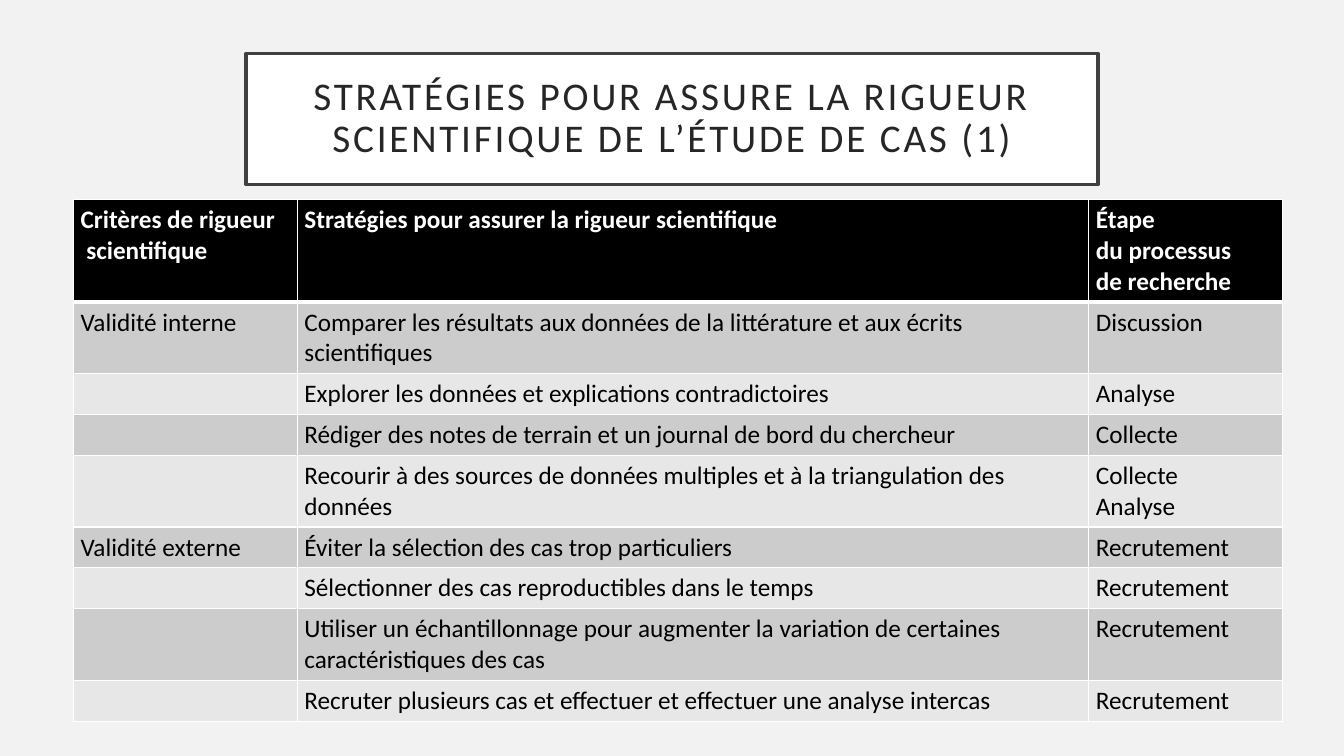
from lxml import etree
from pptx import Presentation
from pptx.dml.color import RGBColor
from pptx.enum import text
from pptx.oxml import ns
from pptx.util import Inches, Pt

COLORS = {
    "background": "F2F2F2", "white": "FFFFFF", "frame": "404040",
    "title": "262626", "black": "000000", "odd": "CCCCCC", "even": "E7E7E7",
}
ROWS = [
    ("Critères de rigueur\n scientifique",
     "Stratégies pour assurer la rigueur scientifique",
     "Étape\ndu processus\nde recherche"),
    ("Validité interne",
     "Comparer les résultats aux données de la littérature et aux écrits scientifiques",
     "Discussion"),
    ("", "Explorer les données et explications contradictoires", "Analyse"),
    ("", "Rédiger des notes de terrain et un journal de bord du chercheur", "Collecte"),
    ("", "Recourir à des sources de données multiples et à la triangulation des données",
     "Collecte\nAnalyse"),
    ("Validité externe", "Éviter la sélection des cas trop particuliers", "Recrutement"),
    ("", "Sélectionner des cas reproductibles dans le temps", "Recrutement"),
    ("", "Utiliser un échantillonnage pour augmenter la variation de certaines "
     "caractéristiques des cas", "Recrutement"),
    ("", "Recruter plusieurs cas et effectuer et effectuer une analyse intercas",
     "Recrutement"),
]
LINE_COUNTS = [3, 2, 1, 1, 2, 1, 1, 2, 1]
COLUMN_WIDTHS = [2.22, 7.85, 1.92]


def color(name):
    return RGBColor.from_string(COLORS[name])


def add_border(cell, side, width):
    border = etree.SubElement(cell._tc.get_or_add_tcPr(), ns.qn(f"a:ln{side}"),
                              w=str(Pt(width)))
    fill = etree.SubElement(border, ns.qn("a:solidFill"))
    etree.SubElement(fill, ns.qn("a:srgbClr"), val=COLORS["white"])


deck = Presentation()
deck.slide_width, deck.slide_height = Inches(13.33), Inches(7.5)
page = deck.slides.add_slide(deck.slide_layouts[5])
page.background.fill.solid()
page.background.fill.fore_color.rgb = color("background")

title = page.shapes.title
title.left, title.top = Inches(2.44), Inches(0.53)
title.width, title.height = Inches(8.45), Inches(1.3)
title.fill.solid()
title.fill.fore_color.rgb = color("white")
title.line.color.rgb = color("frame")
title.line.width = Pt(2.5)
frame = title.text_frame
frame.text = "STRATÉGIES POUR ASSURE LA RIGUEUR SCIENTIFIQUE DE L’ÉTUDE DE CAS (1)"
frame.word_wrap = True
frame.auto_size = text.MSO_AUTO_SIZE.NONE
frame.vertical_anchor = text.MSO_ANCHOR.MIDDLE
frame.margin_left = frame.margin_right = Inches(0.2)
frame.margin_top = frame.margin_bottom = Inches(0.2)
para = frame.paragraphs[0]
para.alignment = text.PP_ALIGN.CENTER
para.line_spacing = 0.9
span = para.runs[0]
span.font.name = "Calibri"
span.font.size = Pt(28)
span.font.color.rgb = color("title")
span._r.get_or_add_rPr().set("spc", "200")

table = page.shapes.add_table(len(ROWS), len(COLUMN_WIDTHS), Inches(0.73), Inches(1.98),
                              Inches(sum(COLUMN_WIDTHS)), Inches(5.13)).table
for column, width in zip(table.columns, COLUMN_WIDTHS):
    column.width = Inches(width)

for row_index, (values, line_count) in enumerate(zip(ROWS, LINE_COUNTS)):
    is_header = row_index == 0
    fill_name = "black" if is_header else "odd" if row_index % 2 else "even"
    table.rows[row_index].height = Inches(0.1 + 0.305 * line_count)
    for column_index, value in enumerate(values):
        cell = table.cell(row_index, column_index)
        cell.margin_left = cell.margin_right = Inches(0.07)
        cell.margin_top = cell.margin_bottom = Inches(0.05)
        for side in "LRTB":
            heavy = (side == "B" and is_header) or (side == "T" and row_index == 1)
            add_border(cell, side, 3 if heavy else 1)
        cell.fill.solid()
        cell.fill.fore_color.rgb = color(fill_name)
        cell.text_frame.text = value
        for para in cell.text_frame.paragraphs:
            para.font.size = Pt(18)
            for span in para.runs:
                span.font.name = "Calibri"
                span.font.size = Pt(18)
                span.font.bold = is_header
                span.font.color.rgb = color("white" if is_header else "black")

deck.save("out.pptx")
